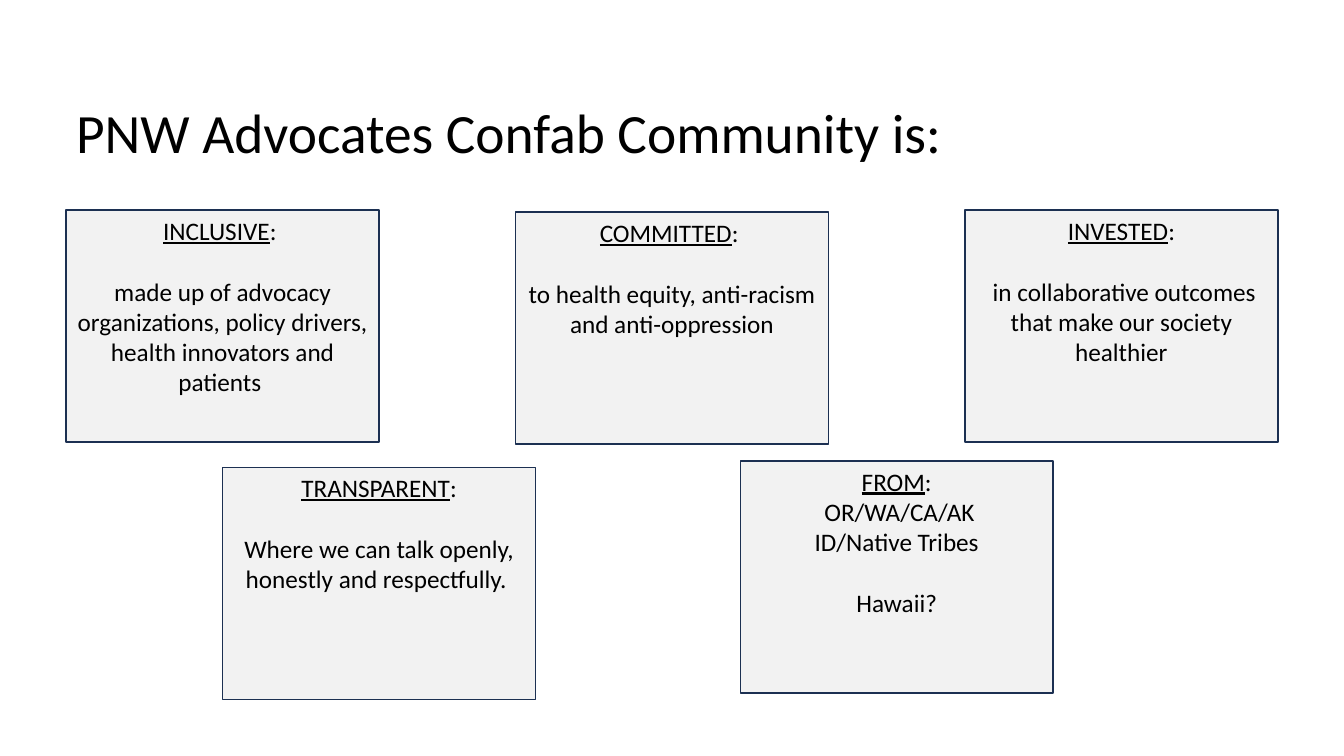
from pptx import Presentation
from pptx import util as u
from pptx.dml import color
from pptx.enum import shapes, text

PX = 9525
CARD_SIZE = (298, 221)
TOP_LEFT, TOP_STEP = 63, 428

TOP_CARDS = [
    (200, "INCLUSIVE", ": ",
     "made up of advocacy organizations, policy drivers, health innovators and patients "),
    (202, "COMMITTED", ": ", "to health equity, anti-racism and anti-oppression"),
    (200, "INVESTED", ":", " in collaborative outcomes that make our society healthier"),
]


def px(length):
    """Turn a length in px into EMU."""
    return u.Emu(length * PX)


def rgb(code):
    """Turn a hex string into a colour."""
    return color.RGBColor.from_string(code)


def write(paragraph, words, size=18, ink="000000", underline=False):
    """Add words to a paragraph in the given format."""
    run = paragraph.add_run()
    run.text = words
    run.font.name = "Calibri"
    run.font.size = u.Pt(size)
    run.font.color.rgb = rgb(ink)
    run.font.underline = underline


def add_title(slide, words):
    """Add the slide heading."""
    frame = slide.shapes.add_textbox(px(63), px(120), px(1071), px(19)).text_frame
    frame.word_wrap = True
    frame.auto_size = text.MSO_AUTO_SIZE.NONE
    frame.vertical_anchor = text.MSO_ANCHOR.MIDDLE
    heading = frame.paragraphs[0]
    heading.line_spacing = 0.9
    write(heading, words, size=39.6)


def add_card(slide, left, top, value, colon, lines, spaced):
    """Add a card with an underlined value; lines at spaced indexes follow a gap."""
    card = slide.shapes.add_shape(
        shapes.MSO_SHAPE.RECTANGLE, px(left), px(top), *map(px, CARD_SIZE))
    card.shadow.inherit = False
    card.fill.solid()
    card.fill.fore_color.rgb = rgb("F2F2F2")
    card.line.color.rgb = rgb("1C3052")
    card.line.width = u.Pt(1)
    frame = card.text_frame
    frame.word_wrap = True
    frame.vertical_anchor = text.MSO_ANCHOR.TOP
    label = frame.paragraphs[0]
    label.alignment = text.PP_ALIGN.CENTER
    write(label, value, underline=True)
    write(label, colon)
    for index, line in enumerate(lines):
        detail = frame.add_paragraph()
        detail.alignment = text.PP_ALIGN.CENTER
        if index == spaced:
            detail.space_before = u.Pt(22)
        write(detail, line)


def main():
    """Build and save the slide."""
    deck = Presentation()
    deck.slide_width, deck.slide_height = px(1280), px(720)
    slide = deck.slides.add_slide(deck.slide_layouts[6])
    add_title(slide, "PNW Advocates Confab Community is:")
    for column, (top, value, colon, detail) in enumerate(TOP_CARDS):
        add_card(slide, TOP_LEFT + column * TOP_STEP, top, value, colon, [detail], spaced=0)
    add_card(slide, 705, 439, "FROM", ":",
             [" OR/WA/CA/AK", "ID/Native Tribes", "Hawaii?"], spaced=2)
    add_card(slide, 212, 445, "TRANSPARENT", ":",
             ["Where we can talk openly, honestly and respectfully. "], spaced=0)
    deck.save("out.pptx")


if __name__ == "__main__":
    main()
